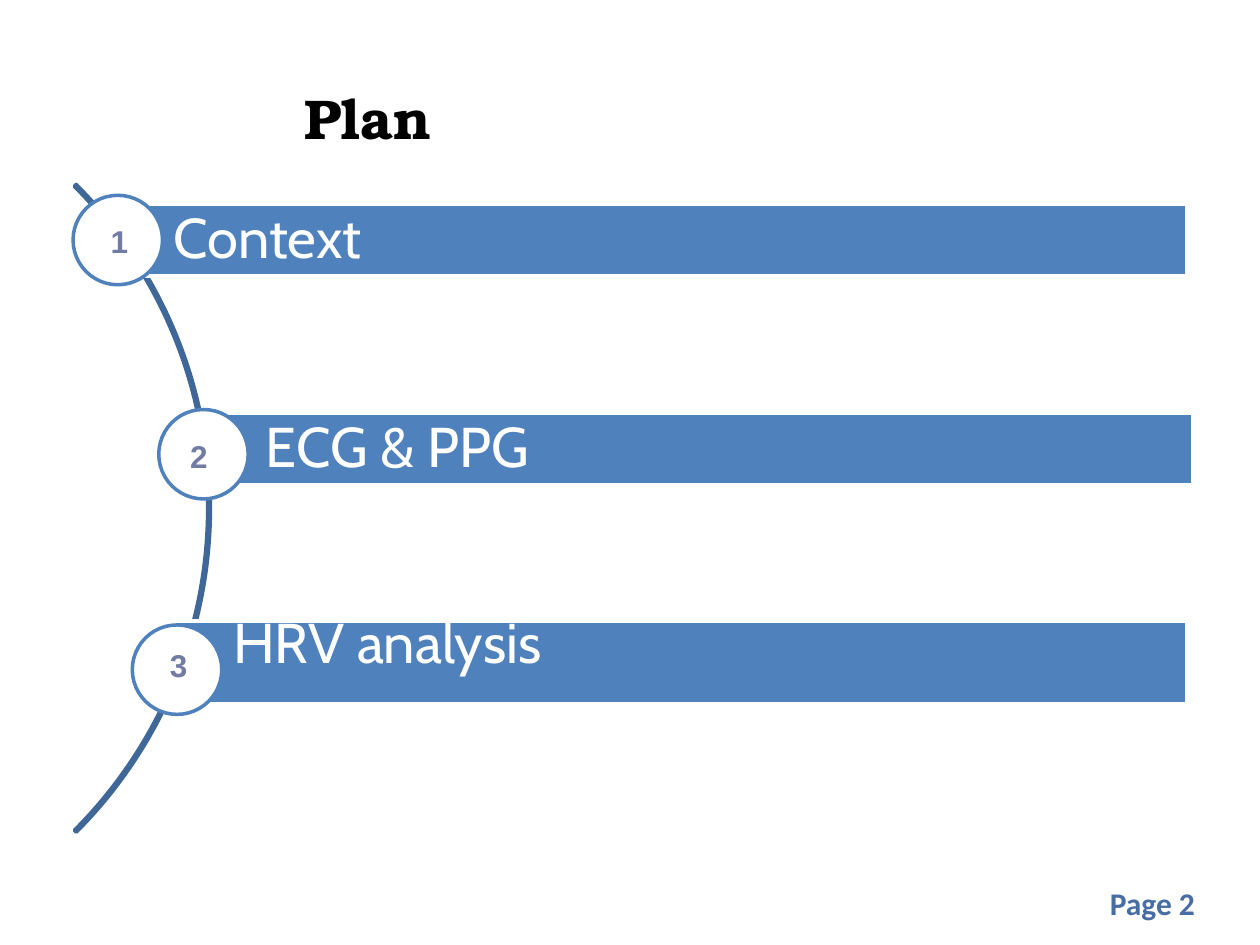
from pptx import Presentation
from pptx import util as u
from pptx.dml.color import RGBColor
from pptx.enum import shapes, text

WHITE = RGBColor(0xFF, 0xFF, 0xFF)
BLACK = RGBColor(0, 0, 0)
BLUE = RGBColor(0x4F, 0x81, 0xBD)
NAVY = RGBColor(0x3F, 0x67, 0x97)
PAGE = RGBColor(0x48, 0x6D, 0xA2)
SLATE = RGBColor(0x72, 0x7C, 0xA3)
KIND = shapes.MSO_SHAPE


class Deck:
    """Holds the style and the current slide."""
    line = u.Pt(2)
    disc = 0.71

    def __init__(self):
        self.prs = Presentation()
        self.prs.slide_width, self.prs.slide_height = u.Inches(10), u.Inches(7.5)
        self.slide = self.prs.slides.add_slide(self.prs.slide_layouts[5])

    def put(self, frame, words, font, size, color, bold=False):
        para = frame.paragraphs[0]
        para.alignment = text.PP_ALIGN.LEFT
        run = para.add_run()
        run.text = words
        run.font.name, run.font.size = font, u.Pt(size)
        run.font.bold, run.font.color.rgb = bold, color
        return para

    def title(self, words, *box):
        head = self.slide.shapes.title
        head.left, head.top, head.width, head.height = map(u.Inches, box)
        frame = head.text_frame
        frame.auto_size = text.MSO_AUTO_SIZE.NONE
        frame.vertical_anchor = text.MSO_ANCHOR.BOTTOM
        self.put(frame, words, "TeX Gyre Bonum", 32, BLACK, True)

    def label(self, words, font, color, *box, wrap=True):
        frame = self.slide.shapes.add_textbox(*map(u.Inches, box)).text_frame
        frame.word_wrap = wrap
        self.put(frame, words, font, 18, color, True)

    def shape(self, kind, fill, edge, *box):
        item = self.slide.shapes.add_shape(kind, *map(u.Inches, box))
        item.shadow.inherit = False
        if fill is None:
            item.fill.background()
        else:
            item.fill.solid()
            item.fill.fore_color.rgb = fill
        item.line.color.rgb, item.line.width = edge, self.line
        return item

    def arc(self, *box):
        item = self.shape(KIND.BLOCK_ARC, None, NAVY, *box)
        for i, value in enumerate((189, 27, 0.003)):
            item.adjustments[i] = value

    def bar(self, words, foot, *box):
        frame = self.shape(KIND.RECTANGLE, BLUE, WHITE, *box).text_frame
        frame.word_wrap = True
        frame.vertical_anchor = text.MSO_ANCHOR.MIDDLE
        frame.margin_left = u.Inches(0.45)
        frame.margin_top = frame.margin_right = u.Inches(0.09)
        frame.margin_bottom = u.Inches(foot)
        self.put(frame, words, "Cabin", 32, WHITE).line_spacing = 0.9

    def circle(self, left, top):
        self.shape(KIND.OVAL, WHITE, BLUE, left, top, self.disc, self.disc)


def main():
    deck = Deck()

    # Page label and title
    deck.label("Page 2", "Calibri", PAGE, 8.71, 6.97, 1.17, 0.4, wrap=False)
    deck.title("Plan", 2.32, 0.17, 7.18, 1.08)

    # Curve behind the steps
    deck.arc(-5.6, 0.4, 7.27, 7.27)

    # Steps: words, bottom inset, bar box, circle corner, number corner
    steps = [
        ("Context", 0.09, (0.93, 1.62, 8.49, 0.57), (0.58, 1.55), (0.78, 1.71)),
        ("ECG & PPG", 0.09, (1.66, 3.28, 7.81, 0.57), (1.26, 3.25), (1.41, 3.42)),
        ("HRV analysis", 0.36, (1.4, 4.93, 8.02, 0.66), (1.05, 4.96), (1.25, 5.08)),
    ]
    for words, foot, box, disc, _ in steps:
        deck.bar(words, foot, *box)
        deck.circle(*disc)

    # Numbers on the circles
    for num, step in enumerate(steps, 1):
        deck.label(str(num), "Arial", SLATE, *step[-1], 0.31, 0.4)

    deck.prs.save("out.pptx")


if __name__ == "__main__":
    main()
